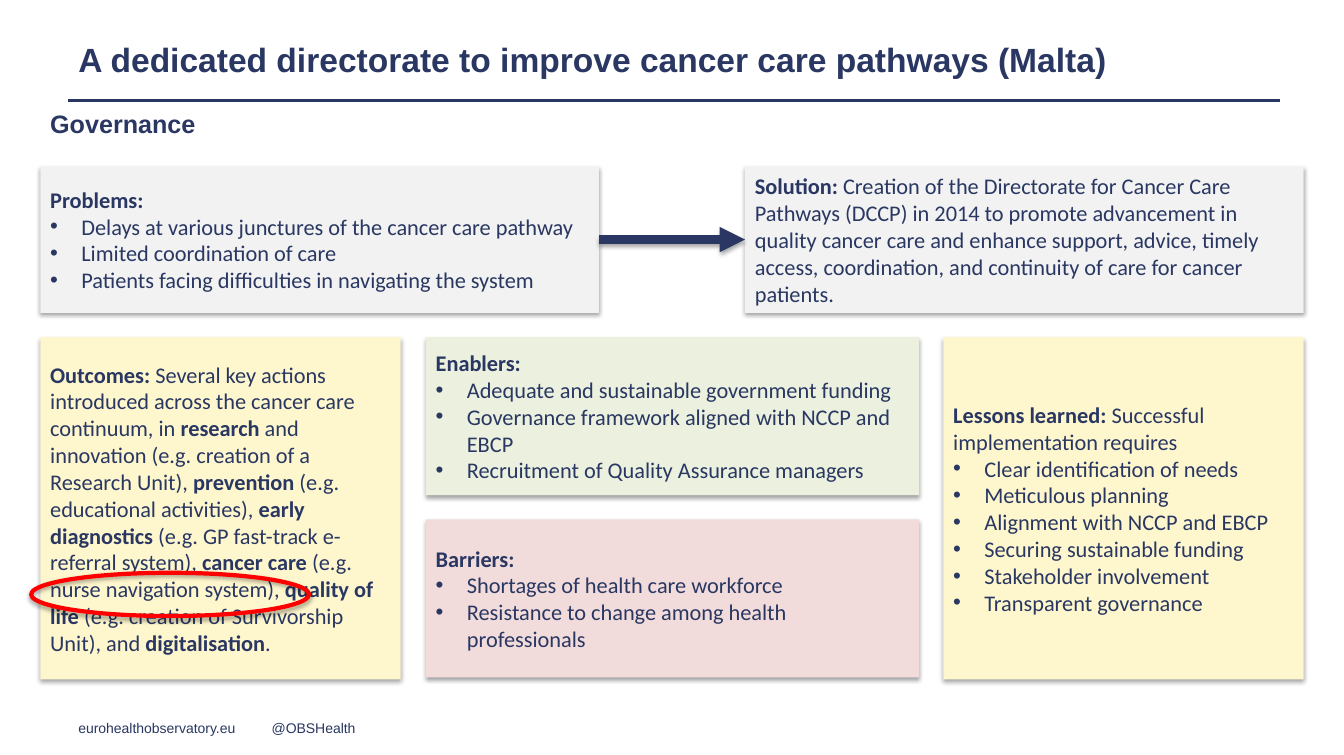
from lxml import etree
from pptx import Presentation
from pptx.dml.color import RGBColor
from pptx.enum.shapes import MSO_CONNECTOR, MSO_SHAPE
from pptx.enum.text import MSO_ANCHOR, PP_ALIGN
from pptx.oxml.ns import qn
from pptx.util import Inches, Pt

RECT, OVAL = MSO_SHAPE.RECTANGLE, MSO_SHAPE.OVAL
STRAIGHT = MSO_CONNECTOR.STRAIGHT
MIDDLE, LEFT = MSO_ANCHOR.MIDDLE, PP_ALIGN.LEFT

NAVY = RGBColor(0x29, 0x37, 0x62)
GREY = RGBColor(0xF2, 0xF2, 0xF2)
CREAM = RGBColor(0xFE, 0xF7, 0xCD)
GREEN = RGBColor(0xEB, 0xF1, 0xDE)
PINK = RGBColor(0xF2, 0xDC, 0xDB)
RED = RGBColor(0xFF, 0x00, 0x00)

EDGE, WIDE, SIDE, MID = 0.4, 5.55, 3.58, 4.9
RIGHT = 12.95
TOP, LOW = 1.65, 3.35
TALL, HALF = 1.46, 1.57
INDENT = Inches(0.31)

LABELS = [
    ("eurohealthobservatory.eu", 0.68, 7.1, 2.13, 0.27, 10, False),
    ("@OBSHealth", 2.6, 7.1, 1.48, 0.27, 10, False),
    ("A dedicated directorate to improve cancer care pathways (Malta)",
     0.68, 0.34, 12.03, 0.47, 24, True),
    ("Governance", EDGE, 1.03, 12.03, 0.53, 18, True),
]

CARDS = [
    (EDGE, TOP, WIDE, TALL, GREY, "*Problems:*", [
        "Delays at various junctures of the cancer care pathway",
        "Limited coordination of care",
        "Patients facing difficulties in navigating the system"]),
    (RIGHT - WIDE, TOP, WIDE, TALL, GREY,
     "*Solution: *Creation of the Directorate for Cancer Care Pathways (DCCP) "
     "in 2014 to promote advancement in quality cancer care and enhance "
     "support, advice, timely access, coordination, and continuity of care "
     "for cancer patients.", []),
    (EDGE, LOW, SIDE, 3.4, CREAM,
     "*Outcomes: *Several key actions introduced across the cancer care "
     "continuum, in *research* and innovation (e.g. creation of a Research "
     "Unit), *prevention* (e.g. educational activities), *early diagnostics* "
     "(e.g. GP fast-track e-referral system), *cancer care *(e.g. nurse "
     "navigation system), *quality of life *(e.g. creation of Survivorship "
     "Unit), and *digitalisation*.", []),
    (RIGHT - SIDE, LOW, SIDE, 3.4, CREAM,
     "*Lessons learned: *Successful implementation requires", [
         "Clear identification of needs",
         "Meticulous planning",
         "Alignment with NCCP and EBCP",
         "Securing sustainable funding",
         "Stakeholder involvement",
         "Transparent governance"]),
    (4.23, LOW, MID, HALF, GREEN, "*Enablers:*", [
        "Adequate and sustainable government funding",
        "Governance framework aligned with NCCP and EBCP",
        "Recruitment of Quality Assurance managers"]),
    (4.23, 5.16, MID, HALF, PINK, "*Barriers:*", [
        "Shortages of health care workforce",
        "Resistance to change among health professionals"]),
]


def style(font, name, size, bold):
    """Set face, size, weight and the navy colour of a font."""
    font.name, font.size, font.bold = name, Pt(size), bold
    font.color.rgb = NAVY


def add_label(slide, text, x, y, w, h, size, bold):
    """Add one line of Arial text."""
    box = slide.shapes.add_textbox(Inches(x), Inches(y), Inches(w), Inches(h))
    box.text_frame.word_wrap = True
    box.text_frame.text = text
    style(box.text_frame.paragraphs[0].runs[0].font, "Arial", size, bold)


def set_shadow(shape, shown=True):
    """Give a shape a soft shadow below it, or none."""
    effects = etree.SubElement(shape._element.spPr, qn("a:effectLst"))
    if shown:
        outer = etree.SubElement(effects, qn("a:outerShdw"), blurRad="40000",
                                 dist="23000", dir="5400000", rotWithShape="0")
        black = etree.SubElement(outer, qn("a:srgbClr"), val="000000")
        etree.SubElement(black, qn("a:alpha"), val="35000")


def add_bullet(para):
    """Turn a paragraph into a bullet with a hanging indent."""
    props = para._p.get_or_add_pPr()
    props.set("marL", str(INDENT))
    props.set("indent", str(-INDENT))
    etree.SubElement(props, qn("a:buFont"), typeface="Arial")
    etree.SubElement(props, qn("a:buChar"), char="•")


def add_runs(para, text):
    """Write text in which asterisks enclose the bold parts."""
    para.alignment = LEFT
    for i, part in enumerate(text.split("*")):
        if part:
            run = para.add_run()
            run.text = part
            style(run.font, "Calibri", 16, i % 2 == 1)


def add_card(slide, x, y, w, h, fill, lead, points):
    """Add a shaded box with a lead paragraph and bullets."""
    card = slide.shapes.add_shape(RECT, Inches(x), Inches(y), Inches(w), Inches(h))
    card.fill.solid()
    card.fill.fore_color.rgb = fill
    card.line.fill.background()
    set_shadow(card)
    frame = card.text_frame
    frame.word_wrap = True
    frame.vertical_anchor = MIDDLE
    add_runs(frame.paragraphs[0], lead)
    for point in points:
        para = frame.add_paragraph()
        add_bullet(para)
        add_runs(para, point)


def add_line(slide, x, end, y, width, arrow=False):
    """Add a level navy line, with head and shadow if it is an arrow."""
    line = slide.shapes.add_connector(STRAIGHT, Inches(x), Inches(y),
                                      Inches(end), Inches(y))
    line.line.color.rgb = NAVY
    line.line.width = Pt(width)
    if arrow:
        etree.SubElement(line.line._get_or_add_ln(), qn("a:tailEnd"),
                         type="triangle")
    set_shadow(line, arrow)


def add_ring(slide, x, y, w, h):
    """Add a red ring that marks a passage."""
    ring = slide.shapes.add_shape(OVAL, Inches(x), Inches(y), Inches(w), Inches(h))
    ring.fill.background()
    ring.line.color.rgb = RED
    ring.line.width = Pt(3)
    set_shadow(ring)


def main():
    """Build and save the slide."""
    deck = Presentation()
    deck.slide_width, deck.slide_height = Inches(13.35), Inches(7.5)
    slide = deck.slides.add_slide(deck.slide_layouts[6])
    for label in LABELS:
        add_label(slide, *label)
    add_line(slide, 0.68, 12.71, 1, 2)
    for card in CARDS:
        add_card(slide, *card)
    add_line(slide, EDGE + WIDE, RIGHT - WIDE, TOP + TALL / 2, 6, arrow=True)
    add_ring(slide, 0.31, 5.69, 2.76, 0.43)
    deck.save("out.pptx")


if __name__ == "__main__":
    main()
